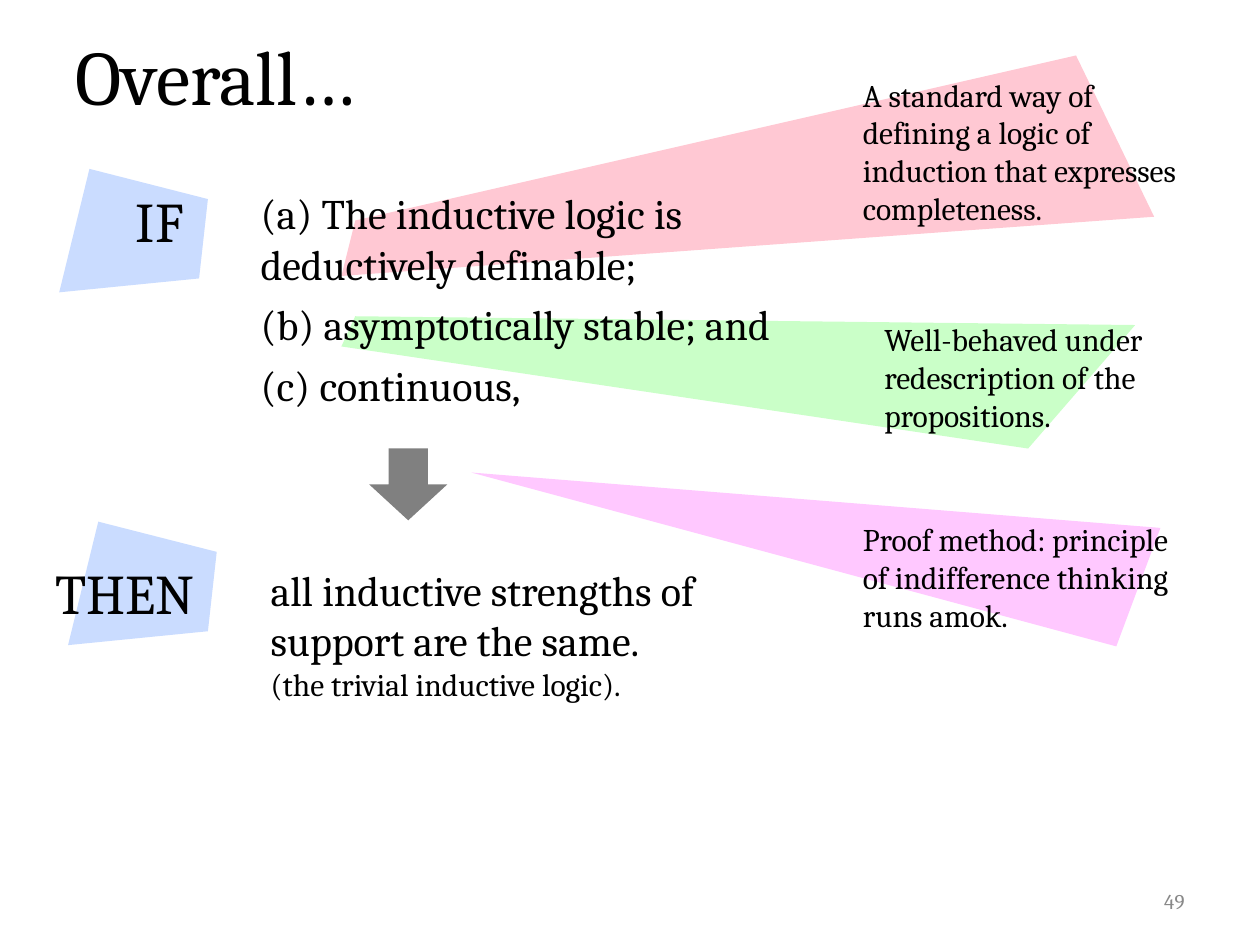
from pptx import Presentation
from pptx.dml.color import RGBColor
from pptx.enum.shapes import MSO_SHAPE
from pptx.enum.text import MSO_ANCHOR, PP_ALIGN
from pptx.util import Inches, Pt

COLORS = {"rose": "FFC8D3", "green": "CAFFC8", "violet": "FFC8FF", "blue": "CADCFF",
          "arrow": "808080", "text": "000000", "number": "898989"}
FONT = "Cambria"
LABEL_OUTLINE = [(0.24, 0), (1.18, 0.24), (1.11, 0.87), (0, 0.98)]


def paint(sp, color):
    """Fill a shape with a plain colour, without line or shadow."""
    sp.fill.solid()
    sp.fill.fore_color.rgb = RGBColor.from_string(COLORS[color])
    sp.line.fill.background()
    sp.shadow.inherit = False


def add_run(p, text, size, color="text"):
    """Add one formatted run to a paragraph."""
    r = p.add_run()
    r.text = text
    r.font.size = Pt(size)
    r.font.name = FONT
    r.font.color.rgb = RGBColor.from_string(COLORS[color])


def add_text(shapes, box, lines, space_after=0):
    """Place a text box holding one paragraph per (text, size) pair."""
    sp = shapes.add_textbox(*map(Inches, box))
    tf = sp.text_frame
    tf.word_wrap = True
    for i, (text, size) in enumerate(lines):
        p = tf.paragraphs[0] if i == 0 else tf.add_paragraph()
        p.space_after = Pt(space_after)
        add_run(p, text, size)
    return sp


def add_polygon(shapes, left, top, outline, color):
    """Draw a closed outline given as offsets from its left and top."""
    points = [(Inches(left + x), Inches(top + y)) for x, y in outline]
    builder = shapes.build_freeform(*points[0])
    builder.add_line_segments(points[1:], close=True)
    paint(builder.convert_to_shape(), color)


def add_callout(s, left, top, outline, color, text_box, text):
    """Group a coloured wedge with the remark on it."""
    group = s.shapes.add_group_shape()
    add_polygon(group.shapes, left, top, outline, color)
    add_text(group.shapes, text_box, [(text, 18)])


def add_title(s, box, text):
    """Move and format the title placeholder."""
    sp = s.shapes.title
    sp.left, sp.top, sp.width, sp.height = map(Inches, box)
    tf = sp.text_frame
    tf.vertical_anchor = MSO_ANCHOR.MIDDLE
    p = tf.paragraphs[0]
    p.alignment = PP_ALIGN.LEFT
    add_run(p, text, 44)


def add_arrow(s, box):
    """Place the arrow leading from the conditions to the conclusion."""
    paint(s.shapes.add_shape(MSO_SHAPE.DOWN_ARROW, *map(Inches, box)), "arrow")


def add_number(s, box, text):
    """Place the slide number at the right of its box."""
    sp = s.shapes.add_textbox(*map(Inches, box))
    tf = sp.text_frame
    tf.word_wrap = True
    tf.vertical_anchor = MSO_ANCHOR.MIDDLE
    p = tf.paragraphs[0]
    p.alignment = PP_ALIGN.RIGHT
    add_run(p, text, 12, "number")


def main():
    """Build the slide and save it."""
    prs = Presentation()
    prs.slide_width, prs.slide_height = Inches(10), Inches(7.5)
    s = prs.slides.add_slide(prs.slide_layouts[5])

    add_callout(s, 2.71, 0.44, [(5.83, 0), (0.11, 1.31), (0, 1.75), (6.45, 1.28)], "rose",
                (6.75, 0.55, 2.77, 1.31),
                "A standard way of defining a logic of induction that expresses completeness.")
    add_callout(s, 2.71, 2.51, [(6.3, 0.07), (0.11, 0), (0, 0.24), (5.45, 1.05)], "green",
                (6.92, 2.49, 2.84, 1.01),
                "Well-behaved under redescription of the propositions.")
    for left, top in [(0.47, 1.34), (0.54, 4.14)]:
        add_polygon(s.shapes, left, top, LABEL_OUTLINE, "blue")

    add_title(s, (0.5, 0.3, 8.76, 0.58), "Overall…")
    add_number(s, (7.17, 6.95, 2.33, 0.4), "49")
    add_text(s.shapes, (0.98, 1.43, 0.61, 0.64), [("IF", 32)])
    add_text(s.shapes, (1.97, 1.44, 4.36, 1.89),
             [("(a) The inductive logic is deductively definable;", 24),
              ("(b) asymptotically stable; and", 24),
              ("(c) continuous,", 24)], space_after=6)
    add_text(s.shapes, (0.34, 4.38, 1.4, 0.64), [("THEN", 32)])
    add_text(s.shapes, (2.05, 4.43, 4.36, 1.25),
             [("all inductive strengths of support are the same.", 24),
              ("(the trivial inductive logic).", 18)])
    add_arrow(s, (2.93, 3.56, 0.62, 0.57))
    add_callout(s, 3.74, 3.75, [(0, 0), (5.47, 0.44), (5.12, 1.38)], "violet",
                (6.75, 4.08, 2.81, 1.01),
                "Proof method: principle of indifference thinking runs amok.")
    prs.save("out.pptx")


if __name__ == "__main__":
    main()
